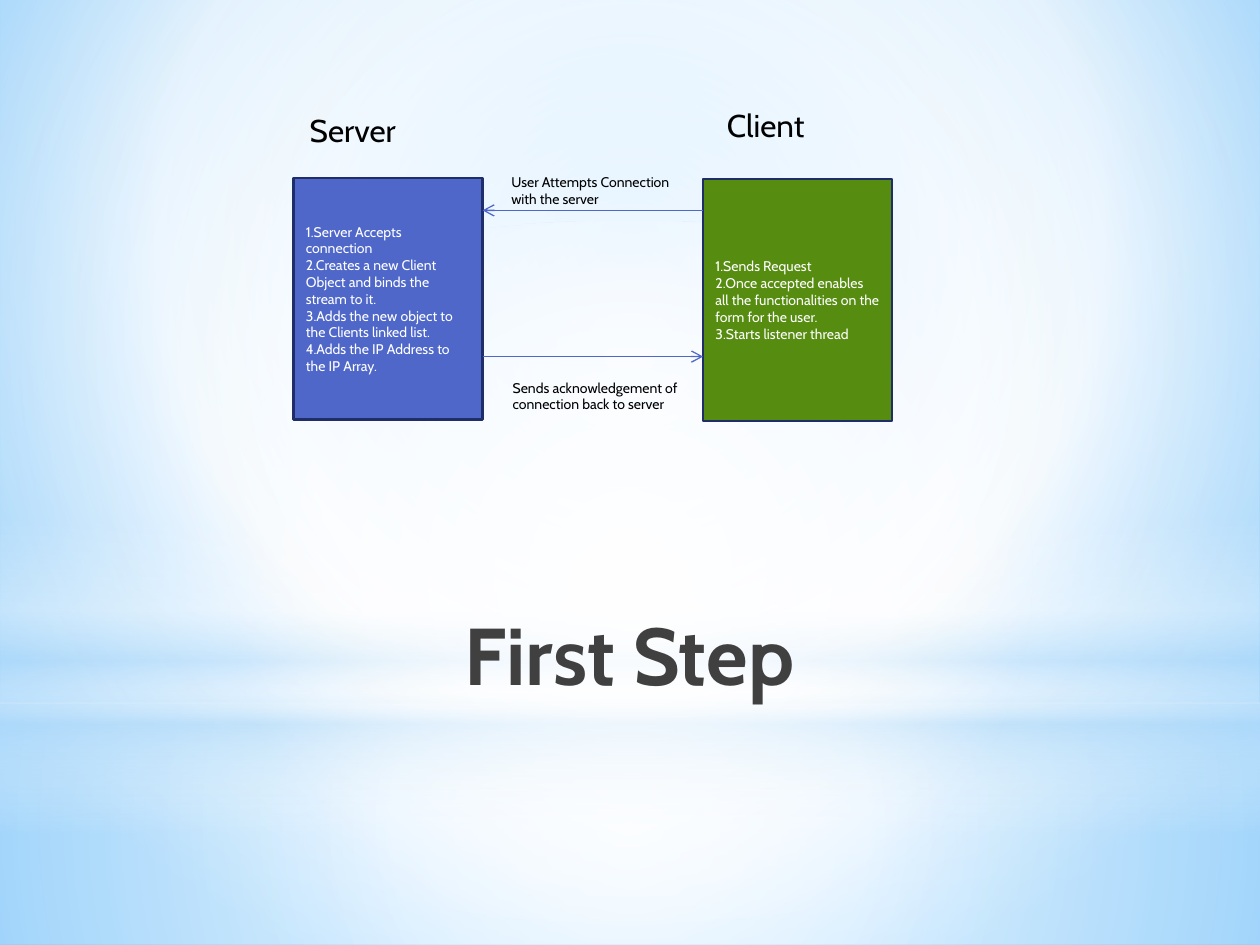
import lxml.etree
import pptx
import pptx.dml.color
import pptx.enum.shapes
import pptx.enum.text
import pptx.oxml
import pptx.oxml.ns
import pptx.util

RGBColor = pptx.dml.color.RGBColor
Inches = pptx.util.Inches
Pt = pptx.util.Pt
MSO_SHAPE = pptx.enum.shapes.MSO_SHAPE
MSO_ANCHOR = pptx.enum.text.MSO_ANCHOR
MSO_AUTO_SIZE = pptx.enum.text.MSO_AUTO_SIZE
PP_ALIGN = pptx.enum.text.PP_ALIGN
qn = pptx.oxml.ns.qn

WHITE = RGBColor(0xFF, 0xFF, 0xFF)
BLACK = RGBColor(0, 0, 0)
CHARCOAL = RGBColor(0x40, 0x40, 0x40)
BLUE = RGBColor(0x4E, 0x67, 0xC8)
NAVY = RGBColor(0x1F, 0x2E, 0x69)
GREEN = RGBColor(0x56, 0x8D, 0x11)
SKY = RGBColor(0x9E, 0xD5, 0xFF)
DEEP_SKY = RGBColor(0x5B, 0xB9, 0xFF)
PALE = RGBColor(0xB4, 0xDC, 0xFA)

FONT = "Cabin"
WIDTH, HEIGHT = 10, 7.5
HORIZON = 5.58
CENTER = (50, 50, 50, 50)

BACKGROUND = [(0, SKY, 100), (60, WHITE, 100), (100, DEEP_SKY, 100)]
BACKGROUND_FOCUS = (20, 10, 20, 60)
GLOWS = [
    (MSO_SHAPE.RECTANGLE, HORIZON, HEIGHT - HORIZON, CENTER,
     [(0, WHITE, 91), (37, WHITE, 76), (100, PALE, 79)]),
    (MSO_SHAPE.RECTANGLE, 0, HORIZON, CENTER,
     [(0, WHITE, 89), (48, WHITE, 62), (100, PALE, 79)]),
    (MSO_SHAPE.RECTANGLE, 4.12, 2.5, None,
     [(0, WHITE, 0), (29, WHITE, 30), (45, PALE, 40),
      (55, WHITE, 26), (65, PALE, 60), (100, WHITE, 0)]),
    (MSO_SHAPE.OVAL, 1.75, 5.58, CENTER, [(0, WHITE, 100), (56, WHITE, 0)]),
]

TITLE = "First Step"
BOX_WIDTH, BOX_HEIGHT = 1.5, 1.92
SERVER_LEFT, CLIENT_LEFT = 2.33, 5.58
SERVER_RIGHT = SERVER_LEFT + BOX_WIDTH
BOXES = [
    (SERVER_LEFT, 1.41, BLUE, [
        "1.Server Accepts connection",
        "2.Creates a new Client Object and binds the stream to it.",
        "3.Adds the new object to the Clients linked list.",
        "4.Adds the IP Address to the IP Array.",
    ]),
    (CLIENT_LEFT, 1.42, GREEN, [
        "1.Sends Request",
        "2.Once accepted enables all the functionalities on the form for the user.",
        "3.Starts listener thread",
    ]),
]
LABELS = [
    ("Server", 2.36, 0.83, 1.33, 0.4, 18),
    ("Client", 5.67, 0.79, 1.33, 0.4, 18),
    ("User Attempts Connection with the server", 3.96, 1.33, 1.58, 0.37, 8),
    ("Sends acknowledgement of connection back to server", 3.97, 2.96, 1.58, 0.37, 8),
]
ARROWS = [(CLIENT_LEFT, SERVER_RIGHT, 1.67), (SERVER_RIGHT, CLIENT_LEFT, 2.83)]


def set_gradient(fill, element, stops, focus):
    fill.gradient()
    gradient = next(element.iter(qn("a:gradFill")))
    for child in list(gradient):
        gradient.remove(child)
    stop_list = lxml.etree.SubElement(gradient, qn("a:gsLst"))
    for position, color, opacity in stops:
        stop = lxml.etree.SubElement(stop_list, qn("a:gs"), pos=str(position * 1000))
        paint = lxml.etree.SubElement(stop, qn("a:srgbClr"), val=str(color))
        if opacity < 100:
            lxml.etree.SubElement(paint, qn("a:alpha"), val=str(opacity * 1000))
    if focus:
        circle = lxml.etree.SubElement(gradient, qn("a:path"), path="circle")
        edges = {side: str(share * 1000) for side, share in zip("ltrb", focus)}
        lxml.etree.SubElement(circle, qn("a:fillToRect"), edges)
    else:
        lxml.etree.SubElement(gradient, qn("a:lin"), ang="5400000", scaled="0")


def write(frame, lines, size, color, alignment=PP_ALIGN.LEFT, bold=False):
    frame.word_wrap = True
    for index, line in enumerate(lines):
        paragraph = frame.add_paragraph() if index else frame.paragraphs[0]
        paragraph.alignment = alignment
        run = paragraph.add_run()
        run.text = line
        run.font.name = FONT
        run.font.size = Pt(size)
        run.font.bold = bold
        run.font.color.rgb = color


def add_glow(slide, kind, top, height, focus, stops):
    shape = slide.shapes.add_shape(kind, 0, Inches(top), Inches(WIDTH), Inches(height))
    shape.shadow.inherit = False
    shape.line.fill.background()
    set_gradient(shape.fill, shape.element, stops, focus)


def place_title(slide):
    title = slide.shapes.title
    title.element.getparent().append(title.element)
    title.left, title.top = Inches(2.39), Inches(4.75)
    title.width, title.height = Inches(5.21), Inches(1.25)
    frame = title.text_frame
    frame.auto_size = MSO_AUTO_SIZE.NONE
    frame.vertical_anchor = MSO_ANCHOR.TOP
    write(frame, [TITLE], 46, CHARCOAL, PP_ALIGN.CENTER, True)


def add_box(slide, left, top, color, lines):
    shape = slide.shapes.add_shape(MSO_SHAPE.RECTANGLE, Inches(left), Inches(top),
                                   Inches(BOX_WIDTH), Inches(BOX_HEIGHT))
    shape.shadow.inherit = False
    shape.fill.solid()
    shape.fill.fore_color.rgb = color
    shape.line.color.rgb = NAVY
    shape.line.width = Pt(1.25)
    shape.text_frame.vertical_anchor = MSO_ANCHOR.MIDDLE
    write(shape.text_frame, lines, 8, WHITE)


def add_label(slide, text, left, top, width, height, size):
    label = slide.shapes.add_textbox(Inches(left), Inches(top), Inches(width), Inches(height))
    write(label.text_frame, [text], size, BLACK)
    label.text_frame.auto_size = MSO_AUTO_SIZE.SHAPE_TO_FIT_TEXT


def add_arrow(slide, start, end, level):
    arrow = slide.shapes.add_connector(pptx.enum.shapes.MSO_CONNECTOR.STRAIGHT, Inches(start),
                                       Inches(level), Inches(end), Inches(level))
    arrow.line.color.rgb = BLUE
    arrow.line.width = Pt(0.75)
    properties = arrow.element.spPr
    lxml.etree.SubElement(properties.find(qn("a:ln")), qn("a:tailEnd"), type="arrow")
    lxml.etree.SubElement(properties, qn("a:effectLst"))


def main():
    presentation = pptx.Presentation()
    presentation.slide_width, presentation.slide_height = Inches(WIDTH), Inches(HEIGHT)
    slide = presentation.slides.add_slide(presentation.slide_layouts[5])
    set_gradient(slide.background.fill, slide.element, BACKGROUND, BACKGROUND_FOCUS)
    for glow in GLOWS:
        add_glow(slide, *glow)
    place_title(slide)
    for box in BOXES:
        add_box(slide, *box)
    for arrow in ARROWS:
        add_arrow(slide, *arrow)
    for label in LABELS:
        add_label(slide, *label)
    presentation.save("out.pptx")


if __name__ == "__main__":
    main()
